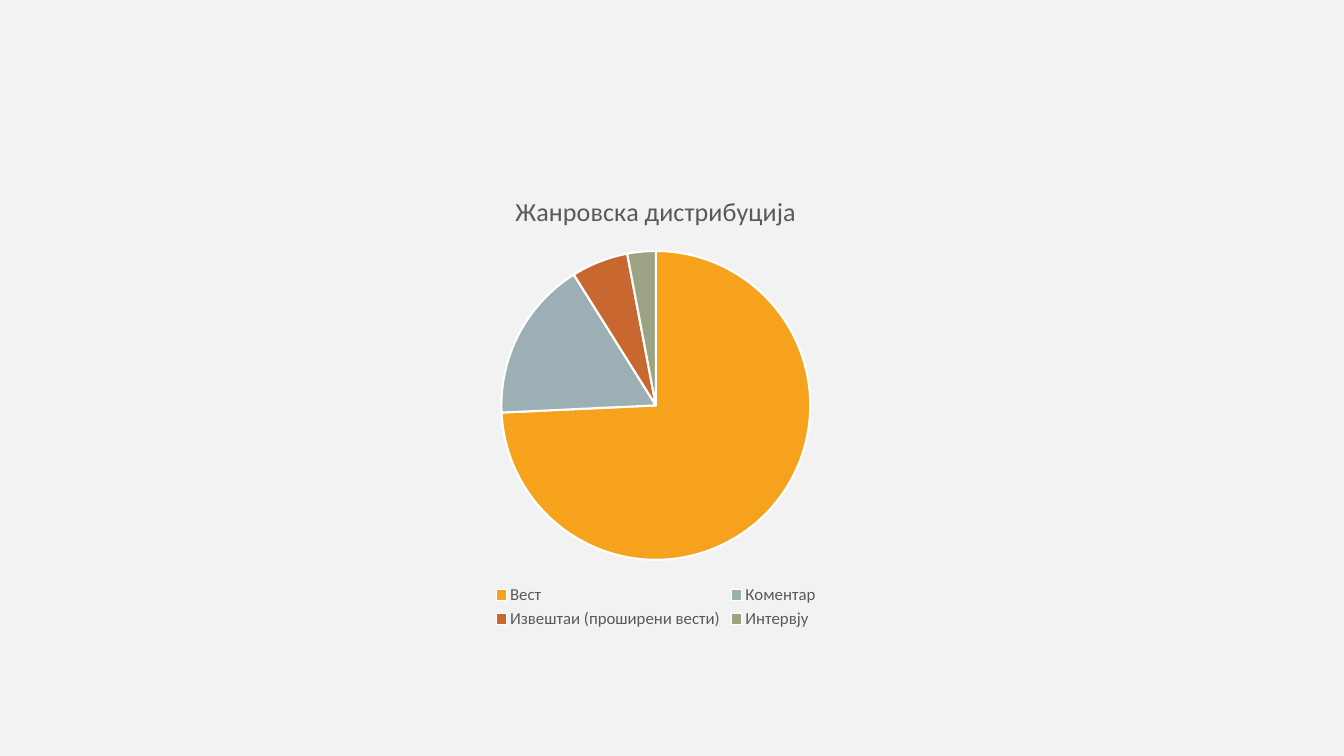
"""Build a slide with a pie chart of the distribution of news genres."""
from pptx import Presentation
from pptx.chart.data import CategoryChartData
from pptx.dml.color import RGBColor
from pptx.enum.chart import XL_CHART_TYPE, XL_LEGEND_POSITION
from pptx.util import Inches, Pt

PIE = XL_CHART_TYPE.PIE
BOTTOM = XL_LEGEND_POSITION.BOTTOM
BACKGROUND = RGBColor(0xF2, 0xF2, 0xF2)
GREY = RGBColor(0x59, 0x59, 0x59)
WHITE = RGBColor(0xFF, 0xFF, 0xFF)
ORANGE = RGBColor(0xF6, 0xA2, 0x1D)
BLUE_GREY = RGBColor(0x9B, 0xAF, 0xB5)
RUST = RGBColor(0xC9, 0x67, 0x31)
SAGE = RGBColor(0x9C, 0xA3, 0x83)

HEADING = "Жанровска дистрибуција"
GENRES = [
    ("Вест", 75, ORANGE),
    ("Коментар", 17, BLUE_GREY),
    ("Извештаи (проширени вести)", 6, RUST),
    ("Интервју", 3, SAGE),
]

prs = Presentation()
prs.slide_width, prs.slide_height = Inches(13.33), Inches(7.5)
slide = prs.slides.add_slide(prs.slide_layouts[6])
slide.background.fill.solid()
slide.background.fill.fore_color.rgb = BACKGROUND

genre_data = CategoryChartData()
genre_data.categories = [genre for genre, share, color in GENRES]
genre_data.add_series(HEADING, [share for genre, share, color in GENRES])
genre_pie = slide.shapes.add_chart(
    PIE, Inches(2.11), Inches(1.73), Inches(8.79), Inches(4.55), genre_data
).chart

genre_pie.has_title = True
genre_pie.chart_title.include_in_layout = False
heading = genre_pie.chart_title.text_frame.paragraphs[0].add_run()
heading.text = HEADING

genre_pie.has_legend = True
genre_pie.legend.position = BOTTOM
genre_pie.legend.include_in_layout = False

FONT_FORMATS = [
    (genre_pie.font, {"name": "Calibri", "size": Pt(10)}),
    (heading.font, {"name": "Calibri", "size": Pt(18.6), "bold": False}),
    (genre_pie.legend.font, {"name": "Calibri", "size": Pt(12)}),
]
for font, values in FONT_FORMATS:
    for attribute, value in values.items():
        setattr(font, attribute, value)
    font.color.rgb = GREY

genre_plot = genre_pie.plots[0]
genre_plot.vary_by_categories = True
for index, (genre, share, color) in enumerate(GENRES):
    slice_format = genre_plot.series[0].points[index].format
    slice_format.fill.solid()
    slice_format.fill.fore_color.rgb = color
    slice_format.line.color.rgb = WHITE
    slice_format.line.width = Pt(1.5)

prs.save("out.pptx")
